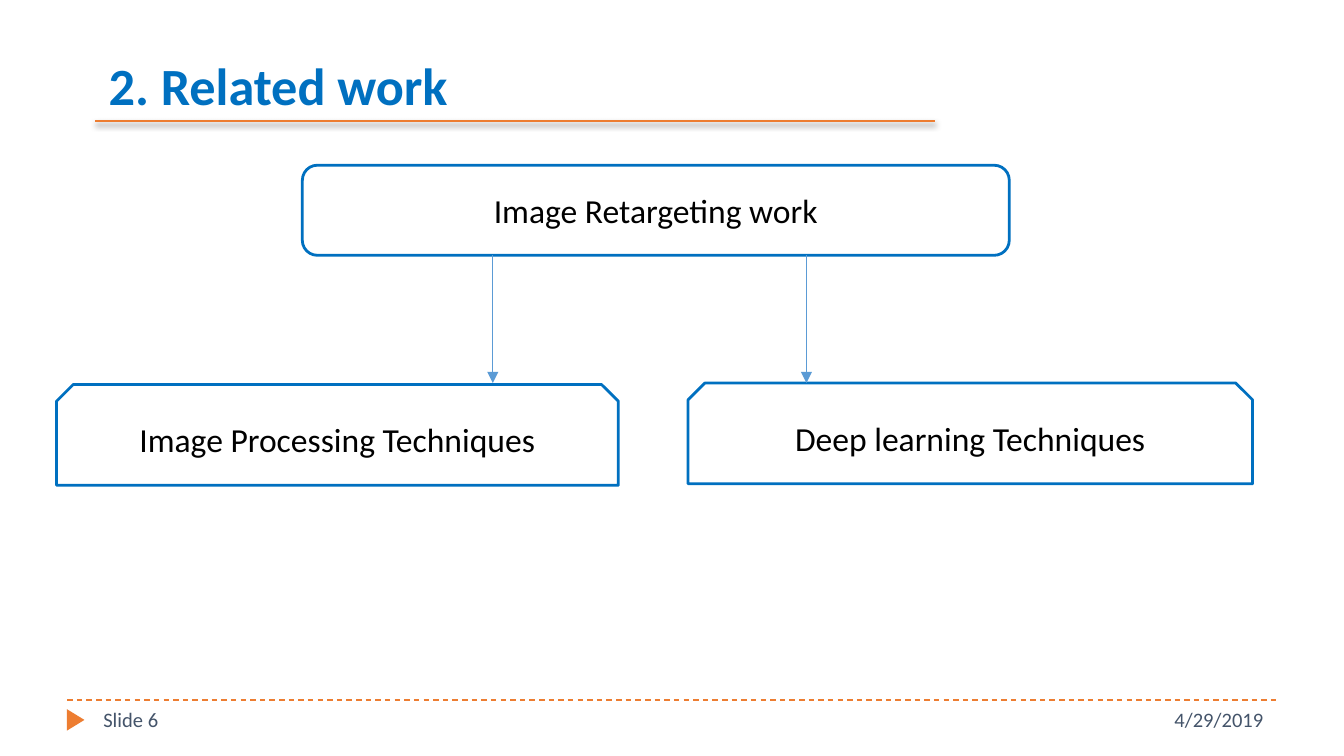
from typing import NamedTuple, Optional

import pptx
import pptx.dml.color
import pptx.enum.dml
import pptx.enum.shapes
import pptx.enum.text
import pptx.oxml
import pptx.oxml.ns
import pptx.util

Pt = pptx.util.Pt
RGBColor = pptx.dml.color.RGBColor
Shape = pptx.enum.shapes.MSO_SHAPE
Align = pptx.enum.text.PP_ALIGN
Anchor = pptx.enum.text.MSO_ANCHOR
Dash = pptx.enum.dml.MSO_LINE

BLUE = RGBColor(0x00, 0x70, 0xC0)
LIGHT_BLUE = RGBColor(0x5B, 0x9B, 0xD5)
ORANGE = RGBColor(0xED, 0x7D, 0x31)
SLATE = RGBColor(0x44, 0x54, 0x6A)
BLACK = RGBColor(0, 0, 0)
WHITE = RGBColor(0xFF, 0xFF, 0xFF)
FONT = "Calibri"
NAMESPACE = pptx.oxml.ns.nsdecls("a")


class Node(NamedTuple):
    text: str
    kind: Shape
    left: float
    top: float
    width: float
    height: float


class Line(NamedTuple):
    start: tuple[float, float]
    end: tuple[float, float]
    color: RGBColor
    width: float = 0.75
    dash: Optional[Dash] = None
    arrow: bool = False
    shadow: bool = False


class Label(NamedTuple):
    text: str
    left: float
    width: float
    align: Align


NODES = [
    Node("Image Processing Techniques", Shape.SNIP_2_SAME_RECTANGLE, 30.24, 206, 301, 54),
    Node("Deep learning Techniques", Shape.SNIP_2_SAME_RECTANGLE, 368.64, 205.2, 302.4, 54),
    Node("Image Retargeting work", Shape.ROUNDED_RECTANGLE, 162, 88.56, 378.72, 48.24),
]
RULES = [
    Line((36, 375), (684, 375), ORANGE, dash=Dash.DASH),
    Line((51, 64.8), (501, 64.8), ORANGE, width=1.5, shadow=True),
]
ARROWS = [Line((x, 136.8), (x, 205.2), LIGHT_BLUE, arrow=True) for x in (264, 432)]
FOOTER = [
    Label("4/29/2019", 504, 180, Align.RIGHT),
    Label("Slide 6", 48.24, 156, Align.LEFT),
]


def write_text(box, text: str, *, size: float, color: RGBColor, bold: bool = False,
               align: Align = Align.LEFT, anchor: Anchor = Anchor.TOP) -> None:
    frame = box.text_frame
    frame.word_wrap = True
    frame.auto_size = pptx.enum.text.MSO_AUTO_SIZE.NONE
    frame.vertical_anchor = anchor
    para = frame.paragraphs[0]
    para.alignment = align
    span = para.add_run()
    span.text = text
    span.font.name = FONT
    span.font.size = Pt(size)
    span.font.bold = bold
    span.font.color.rgb = color


def draw_line(page, line: Line) -> None:
    connector = page.shapes.add_connector(
        pptx.enum.shapes.MSO_CONNECTOR.STRAIGHT,
        *(Pt(value) for value in line.start + line.end))
    connector.line.color.rgb = line.color
    connector.line.width = Pt(line.width)
    if line.dash is not None:
        connector.line.dash_style = line.dash
    if line.arrow:
        connector.line._get_or_add_ln().append(
            pptx.oxml.parse_xml(f'<a:tailEnd {NAMESPACE} type="triangle"/>'))
    shadow = (f'<a:outerShdw blurRad="{Pt(3)}" dist="{Pt(2)}" dir="5400000" rotWithShape="0">'
              '<a:srgbClr val="000000"><a:alpha val="40000"/></a:srgbClr></a:outerShdw>'
              if line.shadow else "")
    connector._element.spPr.append(
        pptx.oxml.parse_xml(f"<a:effectLst {NAMESPACE}>{shadow}</a:effectLst>"))


def draw_node(page, node: Node) -> None:
    box = page.shapes.add_shape(node.kind, Pt(node.left), Pt(node.top),
                                Pt(node.width), Pt(node.height))
    box.shadow.inherit = False
    box.fill.solid()
    box.fill.fore_color.rgb = WHITE
    box.line.color.rgb = BLUE
    box.line.width = Pt(1.5)
    write_text(box, node.text, size=18, color=BLACK,
               align=Align.CENTER, anchor=Anchor.MIDDLE)


def draw_label(page, label: Label) -> None:
    box = page.shapes.add_textbox(Pt(label.left), Pt(375), Pt(label.width), Pt(21.6))
    write_text(box, label.text, size=11, color=SLATE, align=label.align)


def draw_footer_marker(page) -> None:
    marker = page.shapes.add_shape(Shape.ISOSCELES_TRIANGLE,
                                   Pt(34.8), Pt(381), Pt(11.5), Pt(9.4))
    marker.rotation = 90
    marker.shadow.inherit = False
    marker.fill.solid()
    marker.fill.fore_color.rgb = ORANGE
    marker.line.fill.background()


def place_title(page) -> None:
    title = page.shapes.title
    title.left, title.top, title.width, title.height = Pt(51), Pt(4.3), Pt(612), Pt(59.8)
    title.text_frame.margin_bottom = Pt(2)
    write_text(title, "2. Related work", size=28, color=BLUE, bold=True,
               anchor=Anchor.BOTTOM)


def main() -> None:
    deck = pptx.Presentation()
    deck.slide_width, deck.slide_height = Pt(720), Pt(405)
    page = deck.slides.add_slide(deck.slide_layouts[5])
    for rule in RULES:
        draw_line(page, rule)
    draw_footer_marker(page)
    place_title(page)
    for label in FOOTER:
        draw_label(page, label)
    for node in NODES:
        draw_node(page, node)
    for arrow in ARROWS:
        draw_line(page, arrow)
    deck.save("out.pptx")


if __name__ == "__main__":
    main()
